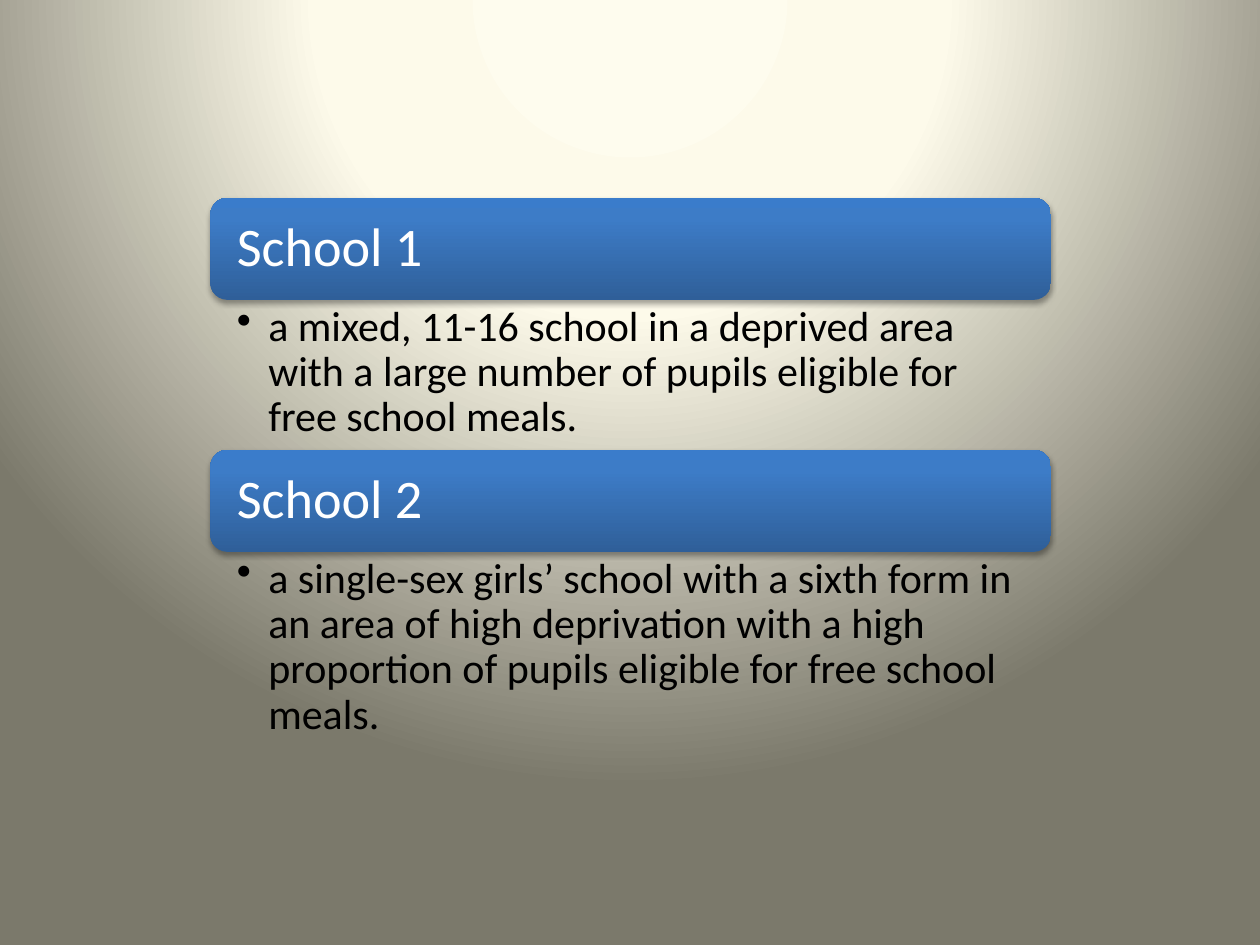
from lxml import etree
from pptx import Presentation
from pptx.dml.color import RGBColor
from pptx.enum.shapes import MSO_SHAPE
from pptx.enum.text import MSO_ANCHOR, PP_ALIGN
from pptx.oxml import parse_xml
from pptx.oxml.ns import nsdecls, qn
from pptx.util import Inches, Pt

ROUND = MSO_SHAPE.ROUNDED_RECTANGLE
TOP, MIDDLE = MSO_ANCHOR.TOP, MSO_ANCHOR.MIDDLE
LEFT = PP_ALIGN.LEFT

WHITE = RGBColor(0xFF, 0xFF, 0xFF)
BLACK = RGBColor(0x00, 0x00, 0x00)
CREAM = RGBColor(0xFE, 0xFC, 0xEE)
IVORY = RGBColor(0xFD, 0xFA, 0xEA)
STONE = RGBColor(0x7B, 0x79, 0x6B)
NAVY = RGBColor(0x2F, 0x5F, 0x99)
BLUE = RGBColor(0x3D, 0x7C, 0xC7)
SKY = RGBColor(0x3A, 0x7C, 0xCB)

FONT = "Calibri"
GLOW = ((0, CREAM), (40, IVORY), (100, STONE))
SHEEN = ((0, NAVY), (80, BLUE), (100, SKY))
RADIAL = ('<a:path path="circle">'
          '<a:fillToRect l="50000" t="-80000" r="50000" b="180000"/></a:path>')
UPWARD = '<a:lin ang="16200000" scaled="0"/>'
SHADE = (f'<a:outerShdw {nsdecls("a")} blurRad="40000" dist="23000" '
         'dir="5400000" rotWithShape="0"><a:srgbClr val="000000">'
         '<a:alpha val="35000"/></a:srgbClr></a:outerShdw>')

SCHOOLS = (
    ("School 1", 1.19,
     "a mixed, 11-16 school in a deprived area with a large number of "
     "pupils eligible for free school meals."),
    ("School 2", 1.54,
     "a single-sex girls’ school with a sixth form in an area of high "
     "deprivation with a high proportion of pupils eligible for free "
     "school meals."),
)
BAR = 0.81


def blend(fill, root, stops, course):
    """Give a fill, found under its root element, a gradient."""
    fill.gradient()
    old = root.find(".//" + qn("a:gradFill"))
    marks = "".join(
        f'<a:gs pos="{pos * 1000}"><a:srgbClr val="{color}"/></a:gs>'
        for pos, color in stops)
    new = parse_xml(f'<a:gradFill {nsdecls("a")} rotWithShape="1">'
                    f'<a:gsLst>{marks}</a:gsLst>{course}</a:gradFill>')
    old.getparent().replace(old, new)


def write(shape, text, size, color, inset, anchor=TOP, bullet=False):
    """Write one paragraph into a shape, with insets left, top, right, bottom."""
    frame = shape.text_frame
    frame.word_wrap = True
    frame.vertical_anchor = anchor
    (frame.margin_left, frame.margin_top,
     frame.margin_right, frame.margin_bottom) = map(Inches, inset)
    para = frame.paragraphs[0]
    para.alignment = LEFT
    para.line_spacing = 0.9
    run = para.add_run()
    run.text = text
    run.font.name = FONT
    run.font.size = Pt(size)
    run.font.color.rgb = color
    if bullet:
        para.level = 1
        props = para._p.get_or_add_pPr()
        props.set("marL", str(Inches(0.25)))
        props.set("indent", str(Inches(-0.25)))
        etree.SubElement(props, qn("a:buChar")).set("char", "•")


def add_bar(slide, name, left, top, width, height):
    """Draw the shaded bar that names a school."""
    bar = slide.shapes.add_shape(
        ROUND, Inches(left), Inches(top), Inches(width), Inches(height))
    blend(bar.fill, bar.element, SHEEN, UPWARD)
    bar.line.fill.background()
    bar.shadow.inherit = False
    bar.element.spPr.find(qn("a:effectLst")).append(parse_xml(SHADE))
    write(bar, name, 31, WHITE, (0.17, 0.13, 0.17, 0.13), anchor=MIDDLE)


def add_note(slide, text, left, top, width, height):
    """Place the bulleted description of a school."""
    note = slide.shapes.add_textbox(
        Inches(left), Inches(top), Inches(width), Inches(height))
    write(note, text, 24, BLACK, (0.21, 0.04, 0.24, 0.04), bullet=True)


def add_list(slide, left, top, width):
    """Stack each school's bar and description from the top down."""
    for name, depth, text in SCHOOLS:
        add_bar(slide, name, left, top, width, BAR)
        add_note(slide, text, left, top + BAR, width, depth)
        top += BAR + depth


def main():
    """Build the slide and save it."""
    deck = Presentation()
    deck.slide_width, deck.slide_height = Inches(10), Inches(7.5)
    slide = deck.slides.add_slide(deck.slide_layouts[6])
    blend(slide.background.fill, slide.element, GLOW, RADIAL)
    add_list(slide, 1.67, 1.57, 6.67)
    deck.save("out.pptx")


if __name__ == "__main__":
    main()
